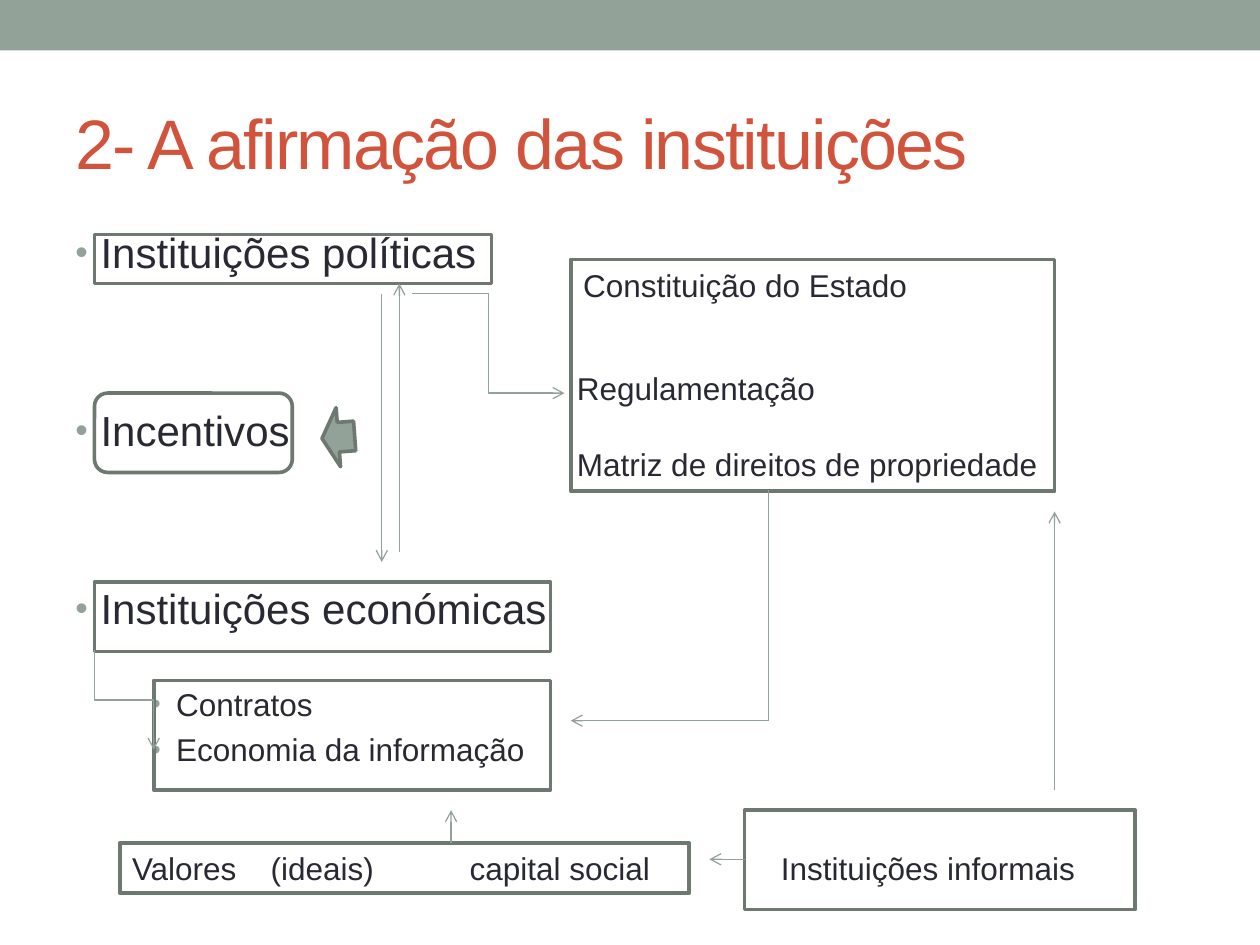
from lxml import etree
from pptx import Presentation
from pptx.dml.color import RGBColor
from pptx.enum.shapes import MSO_CONNECTOR, MSO_SHAPE
from pptx.enum.text import MSO_ANCHOR
from pptx.oxml.ns import qn
from pptx.util import Pt

RECT, ROUND = MSO_SHAPE.RECTANGLE, MSO_SHAPE.ROUNDED_RECTANGLE
ARROW = MSO_SHAPE.DOWN_ARROW
LINE, BENT = MSO_CONNECTOR.STRAIGHT, MSO_CONNECTOR.ELBOW
MIDDLE = MSO_ANCHOR.MIDDLE

PX = 9144  # 100 px to the inch


class Theme:
    font = "Arial"
    sage, edge = "93A299", "6D7871"
    ink, title = "292934", "D2533C"
    big, head, small = 40, 24, 18
    frame, wire = 2.08, 0.75


# Content: places are left, top, width, height in px
TITLE = "2- A afirmação das instituições"
TITLE_AT = (50, 58, 900, 108)
LIST_AT = (50, 175, 900, 533)
LIST = [  # text, level, space before in points
    ("Instituições políticas", 0, 3),
    ("Incentivos", 0, 73),
    ("Instituições económicas", 0, 73),
    ("Contratos", 1, 29.5),
    ("Economia da informação", 1, 4.4),
]
LEVELS = [  # size, left margin px, bullet size %
    (Theme.head, 20, 85),
    (Theme.small, 80, 90),
]
HANG = 20
NOTES = [  # place, lines, gap in points, tab stops in px
    ((453, 206, 280, 40), ["Constituição do Estado"], 0, []),
    ((448, 288, 389, 101),
     ["Regulamentação", "Matriz de direitos de propriedade"], 22, []),
    ((95, 669, 450, 40), ["Valores\t(ideais)\tcapital social"], 0, [110, 268]),
    ((610, 669, 256, 40), ["Instituições informais"], 0, []),
]
FRAMES = [
    (RECT, (75, 186, 315, 39)),
    (RECT, (75, 462, 362, 55)),
    (RECT, (453, 206, 384, 184)),
    (RECT, (122, 540, 315, 87)),
    (RECT, (95, 669, 452, 40)),
    (RECT, (591, 643, 310, 79)),
    (ROUND, (75, 312, 157, 63)),
]
WIRES = [  # kind, from x, y, to x, y, arrowhead, turn in degrees
    (BENT, (327, 233, 448, 312), True, 0),
    (LINE, (303, 233, 303, 446), True, 0),
    (LINE, (317, 438, 317, 225), True, 0),
    (BENT, (138, 532, 59, 579), True, 270),
    (LINE, (610, 389, 610, 572), False, 0),
    (LINE, (610, 572, 453, 572), True, 0),
    (LINE, (591, 682, 563, 682), True, 0),
    (LINE, (358, 669, 358, 643), True, 0),
    (LINE, (837, 627, 837, 406), True, 0),
]


def emu(nums):
    return [n * PX for n in nums]


def rgb(code):
    return RGBColor.from_string(code)


def node(base, tag, **attrs):
    return etree.SubElement(base, qn(tag), {k: str(v) for k, v in attrs.items()})


def add_text(slide, at):
    frame = slide.shapes.add_textbox(*emu(at)).text_frame
    frame.word_wrap = True
    return frame


def put(frame, pos, text, size, color=Theme.ink, gap=0):
    para = frame.paragraphs[0] if pos == 0 else frame.add_paragraph()
    para.text = text
    font = para.font
    font.name, font.size = Theme.font, Pt(size)
    font.color.rgb = rgb(color)
    para.space_before = Pt(gap)
    return para


def props(para):
    """Paragraph properties, with the font defaults kept last."""
    return para._p.get_or_add_pPr()


def insert(para, *items):
    last = props(para).find(qn("a:defRPr"))
    for item in items:
        last.addprevious(item)


def bullet(para, left, scale):
    props(para).set("marL", str(left * PX))
    props(para).set("indent", str(-HANG * PX))
    tint = etree.Element(qn("a:buClr"))
    node(tint, "a:srgbClr", val=Theme.sage)
    size = etree.Element(qn("a:buSzPct"), val=str(scale * 1000))
    face = etree.Element(qn("a:buFont"), typeface=Theme.font)
    mark = etree.Element(qn("a:buChar"), char="•")
    insert(para, tint, size, face, mark)


def add_tabs(para, stops):
    tabs = etree.Element(qn("a:tabLst"))
    for stop in stops:
        node(tabs, "a:tab", pos=stop * PX, algn="l")
    insert(para, tabs)


def add_shape(slide, kind, at, fill=None, line=None):
    shape = slide.shapes.add_shape(kind, *emu(at))
    shape.shadow.inherit = False
    if fill:
        shape.fill.solid()
        shape.fill.fore_color.rgb = rgb(fill)
    else:
        shape.fill.background()
    if line:
        shape.line.color.rgb = rgb(line)
        shape.line.width = Pt(Theme.frame)
    else:
        shape.line.fill.background()
    return shape


def add_wire(slide, kind, ends, head, turn):
    wire = slide.shapes.add_connector(kind, *emu(ends))
    wire.line.color.rgb = rgb(Theme.sage)
    wire.line.width = Pt(Theme.wire)
    look = wire._element.spPr
    if head:
        node(look.find(qn("a:ln")), "a:tailEnd", type="arrow")
    if turn:
        look.find(qn("a:xfrm")).set("rot", str(turn * 60000))
    node(look, "a:effectLst")


def main():
    deck = Presentation()
    deck.slide_width, deck.slide_height = emu((1000, 750))
    slide = deck.slides.add_slide(deck.slide_layouts[6])

    # Top band and title
    add_shape(slide, RECT, (0, 0, 1000, 40), fill=Theme.sage)
    frame = add_text(slide, TITLE_AT)
    frame.vertical_anchor = MIDDLE
    para = put(frame, 0, TITLE, Theme.big, Theme.title)
    para.runs[0].font._element.set("spc", "-100")

    # Bullet list
    frame = add_text(slide, LIST_AT)
    for pos, (text, level, gap) in enumerate(LIST):
        size, left, scale = LEVELS[level]
        para = put(frame, pos, text, size, gap=gap)
        para.level = level
        bullet(para, left, scale)

    # Notes
    for at, lines, gap, stops in NOTES:
        frame = add_text(slide, at)
        for pos, text in enumerate(lines):
            para = put(frame, pos, text, Theme.small, gap=gap * pos)
            if stops:
                add_tabs(para, stops)

    # Frames, wires and block arrow
    for kind, at in FRAMES:
        add_shape(slide, kind, at, line=Theme.edge)
    for wire in WIRES:
        add_wire(slide, *wire)
    arrow = add_shape(slide, ARROW, (245, 334, 47, 26), Theme.sage, Theme.edge)
    arrow.rotation = 85.7

    deck.save("out.pptx")


if __name__ == "__main__":
    main()
